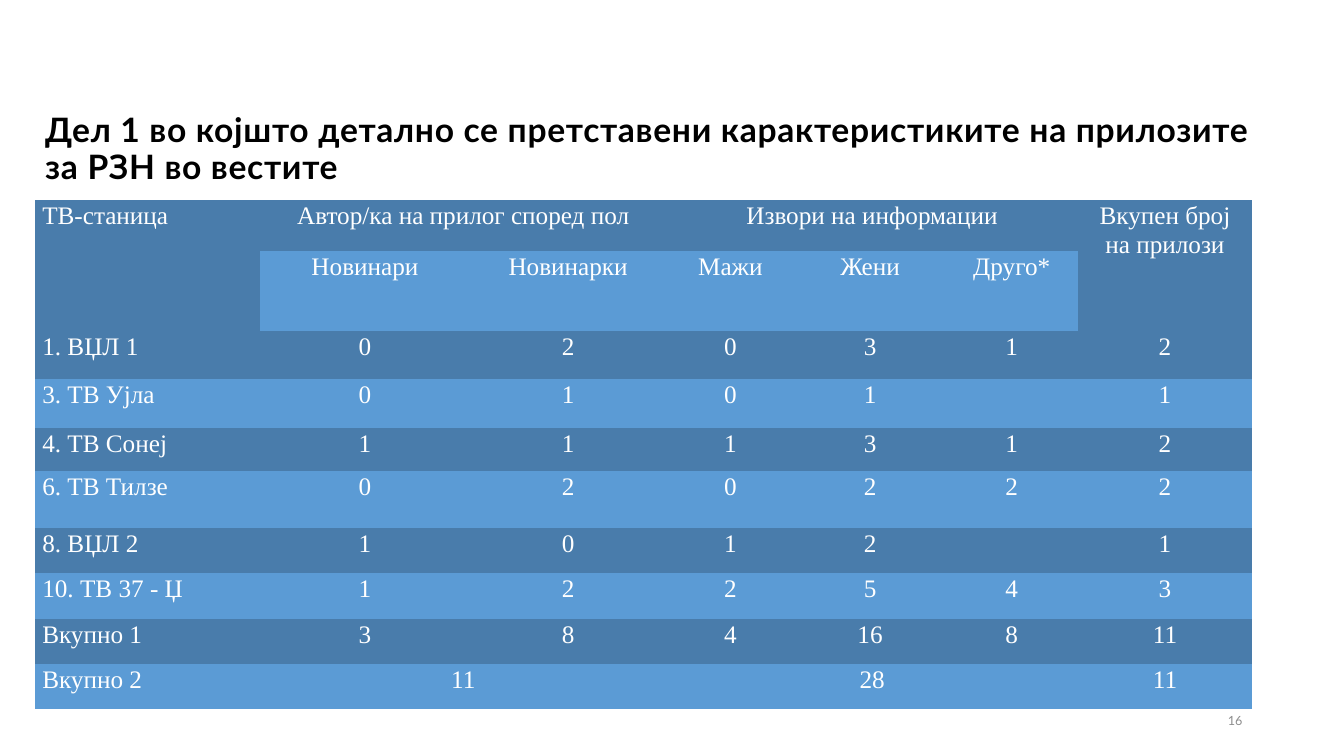
from pptx import Presentation
from pptx.dml.color import RGBColor
from pptx.enum.text import MSO_ANCHOR, PP_ALIGN
from pptx.oxml.ns import qn
from pptx.util import Inches, Pt

LEFT, CENTER, RIGHT = PP_ALIGN.LEFT, PP_ALIGN.CENTER, PP_ALIGN.RIGHT
TOP, MIDDLE = MSO_ANCHOR.TOP, MSO_ANCHOR.MIDDLE
NO_GRID_STYLE = "{2D5ABB26-0587-4C30-8999-92F81FD0307C}"
DARK_BLUE, LIGHT_BLUE = "497CAB", "5B9BD5"

COLUMN_WIDTHS = [2.23, 2.08, 1.95, 1.27, 1.5, 1.31, 1.73]
ROW_HEIGHTS = [0.51, 0.79, 0.48, 0.49, 0.42, 0.57, 0.45, 0.45, 0.45, 0.45]
ROWS = [
    ["ТВ-станица", "Автор/ка на прилог според пол", "",
     "Извори на информации", "", "", "Вкупен број на прилози"],
    ["", "Новинари", "Новинарки", "Мажи", "Жени", "Друго*", ""],
    ["1. ВЏЛ 1", "0", "2", "0", "3", "1", "2"],
    ["3. ТВ Ујла", "0", "1", "0", "1", "", "1"],
    ["4. ТВ Сонеј", "1", "1", "1", "3", "1", "2"],
    ["6. ТВ Тилзе", "0", "2", "0", "2", "2", "2"],
    ["8. ВЏЛ 2", "1", "0", "1", "2", "", "1"],
    ["10. ТВ 37 - Џ", "1", "2", "2", "5", "4", "3"],
    ["Вкупно 1", "3", "8", "4", "16", "8", "11"],
    ["Вкупно 2", "11", "", "28", "", "", "11"],
]
MERGES = [
    ((0, 0), (1, 0)), ((0, 1), (0, 2)), ((0, 3), (0, 5)), ((0, 6), (1, 6)),
    ((9, 1), (9, 2)), ((9, 3), (9, 5)),
]


def color(hex_value):
    return RGBColor.from_string(hex_value)


def add_run(paragraph, text, size, font_name, hex_value, bold=False):
    run = paragraph.add_run()
    run.text = text
    run.font.size = Pt(size)
    run.font.name = font_name
    run.font.bold = bold
    run.font.color.rgb = color(hex_value)
    return run


def add_text_area(slide, box, anchor, align):
    frame = slide.shapes.add_textbox(*map(Inches, box)).text_frame
    frame.word_wrap = True
    frame.vertical_anchor = anchor
    frame.paragraphs[0].alignment = align
    return frame.paragraphs[0]


def add_title(slide, box):
    heading = add_text_area(slide, box, TOP, LEFT)
    heading.line_spacing = 0.9
    heading.space_before = Pt(10)
    run = add_run(
        heading,
        "Дел 1 во којшто детално се претставени карактеристиките "
        "на прилозите за РЗН во вестите",
        24, "Lato", "000000", bold=True)
    run.font._element.set("spc", "50")


def add_page_number(slide, box):
    page = add_text_area(slide, box, MIDDLE, RIGHT)
    add_run(page, "16", 9, "Lato", "8C8C8C")


def fill_cell(cell, text, fill, align):
    cell.fill.solid()
    cell.fill.fore_color.rgb = color(fill)
    cell.margin_left = cell.margin_right = Inches(0.07)
    cell.margin_top = cell.margin_bottom = 0
    paragraph = cell.text_frame.paragraphs[0]
    paragraph.alignment = align
    paragraph.line_spacing = 1.07
    if text:
        add_run(paragraph, text, 18, "Times New Roman", "FFFFFF")


def add_station_table(slide, box):
    frame = slide.shapes.add_table(
        len(ROWS), len(COLUMN_WIDTHS), *map(Inches, box))
    table = frame.table
    table._tbl.tblPr.find(qn("a:tableStyleId")).text = NO_GRID_STYLE
    for column, width in zip(table.columns, COLUMN_WIDTHS):
        column.width = Inches(width)
    for row, height in zip(table.rows, ROW_HEIGHTS):
        row.height = Inches(height)
    for r, values in enumerate(ROWS):
        fill = LIGHT_BLUE if r % 2 else DARK_BLUE
        for c, value in enumerate(values):
            fill_cell(table.cell(r, c), value, fill, CENTER if c else LEFT)
    for start, end in MERGES:
        table.cell(*start).merge(table.cell(*end))


def main():
    presentation = Presentation()
    presentation.slide_width = Inches(13.33)
    presentation.slide_height = Inches(7.5)
    slide = presentation.slides.add_slide(presentation.slide_layouts[6])
    add_title(slide, (0.35, 1.08, 12.24, 0.5))
    add_page_number(slide, (11.34, 6.95, 1.08, 0.4))
    add_station_table(slide, (0.35, 1.98, 12.07, 5.06))
    presentation.save("out.pptx")


if __name__ == "__main__":
    main()
